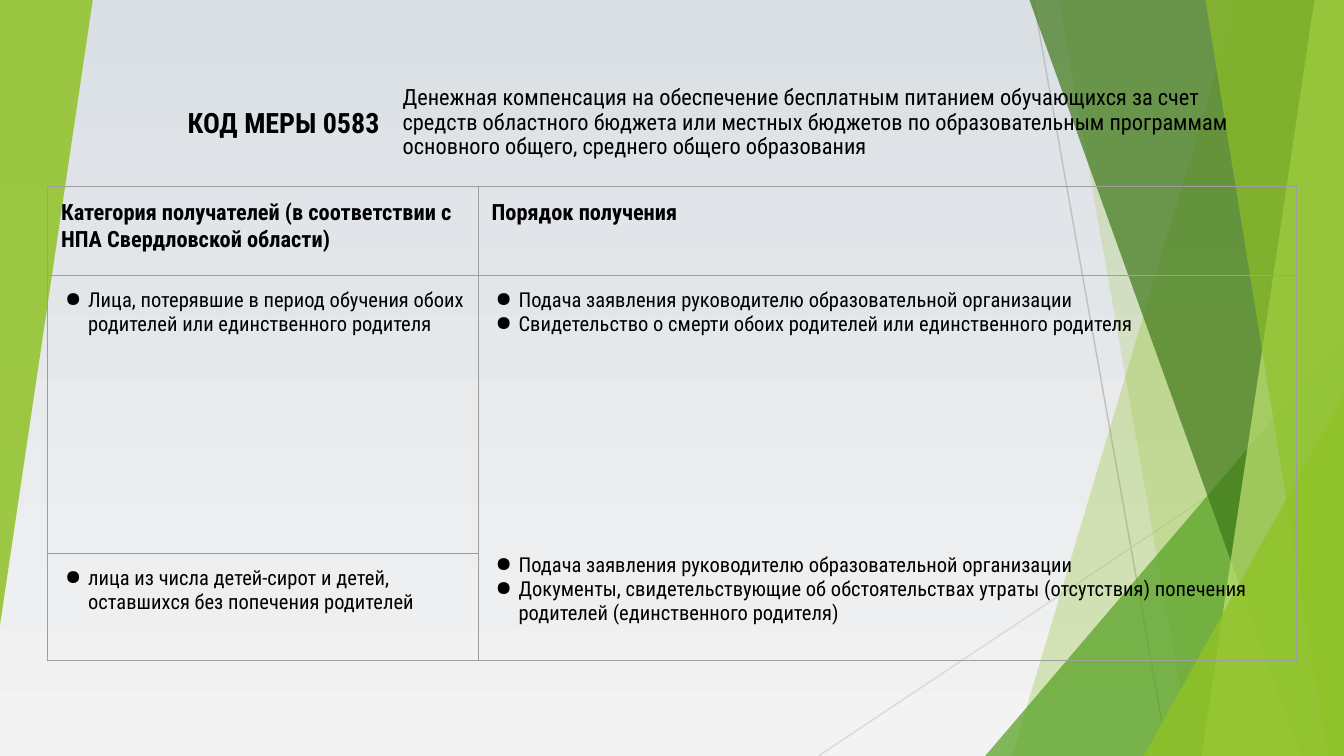
from lxml.etree import SubElement
from pptx import Presentation
from pptx.dml.color import RGBColor
from pptx.enum.shapes import MSO_CONNECTOR, MSO_SHAPE
from pptx.enum.text import MSO_ANCHOR, MSO_AUTO_SIZE, PP_ALIGN
from pptx.oxml.ns import qn
from pptx.util import Pt

WIDTH, HEIGHT = 720, 405
FONT = "Roboto Condensed"
COLORS = {
    "text": "000000", "border": "9E9E9E", "sky": "DADFE4", "ground": "F3F3F3",
    "line": "BFBFBF", "pale_line": "D9D9D9", "lime": "90C226",
    "green": "54A021", "dark": "3F7819", "light": "C0E474",
}
TITLE = (
    "Денежная компенсация на обеспечение бесплатным питанием обучающихся за счет "
    "средств областного бюджета или местных бюджетов по образовательным программам "
    "основного общего, среднего общего образования"
)
HEADERS = ["Категория получателей (в соответствии с НПА Свердловской области)", "Порядок получения"]
CATEGORIES = [
    "Лица, потерявшие в период обучения обоих родителей или единственного родителя",
    "лица из числа детей-сирот и детей, оставшихся без попечения родителей",
]
APPLICATION = "Подача заявления руководителю образовательной организации"
PROCEDURES = [
    [APPLICATION, "Свидетельство о смерти обоих родителей или единственного родителя"],
    [APPLICATION, "Документы, свидетельствующие об обстоятельствах утраты (отсутствия) "
                  "попечения родителей (единственного родителя)"],
]
GROUP_GAP = 116


def rgb(name):
    """Return the named palette colour."""
    return RGBColor.from_string(COLORS[name])


class SlideBuilder:
    """Hold the style and the current slide, and draw each kind of element."""

    def __init__(self, presentation):
        """Add a title-only slide with a vertical gradient behind it."""
        self.slide = presentation.slides.add_slide(presentation.slide_layouts[5])
        self.shapes = self.slide.shapes
        fill = self.slide.background.fill
        fill.gradient()
        fill.gradient_angle = 270
        for stop, name in zip(fill.gradient_stops, ("sky", "ground")):
            stop.color.rgb = rgb(name)

    def line(self, start, end, color):
        """Draw a thin straight line."""
        connector = self.shapes.add_connector(MSO_CONNECTOR.STRAIGHT, *map(Pt, start + end))
        connector.line.color.rgb = rgb(color)
        connector.line.width = Pt(0.75)
        SubElement(connector.element.spPr, qn("a:effectLst"))

    def paint(self, shape, color, opacity):
        """Give a shape a translucent fill with no outline or shadow."""
        shape.fill.solid()
        shape.fill.fore_color.rgb = rgb(color)
        alpha = SubElement(shape.element.spPr.find(".//" + qn("a:srgbClr")), qn("a:alpha"))
        alpha.set("val", str(opacity * 1000))
        shape.line.fill.background()
        shape.shadow.inherit = False

    def band(self, top_left, bottom_left, color, opacity):
        """Draw a full-height band with a slanted left side."""
        builder = self.shapes.build_freeform(Pt(top_left), 0)
        corners = [(WIDTH, 0), (WIDTH, HEIGHT), (bottom_left, HEIGHT)]
        builder.add_line_segments([(Pt(x), Pt(y)) for x, y in corners])
        self.paint(builder.convert_to_shape(), color, opacity)

    def triangle(self, box, color, opacity, rotation=0):
        """Draw a right triangle."""
        shape = self.shapes.add_shape(MSO_SHAPE.ISOSCELES_TRIANGLE, *map(Pt, box))
        shape.adjustments[0] = 1
        shape.rotation = rotation
        self.paint(shape, color, opacity)

    def add_text(self, paragraph, text, size, bold=False):
        """Put formatted text in a paragraph."""
        run = paragraph.add_run()
        run.text = text
        run.font.color.rgb = rgb("text")
        for name, value in {"name": FONT, "size": Pt(size), "bold": bold}.items():
            setattr(run.font, name, value)

    def frame(self, shape, horizontal, vertical):
        """Set up a middle-anchored text frame and return its first paragraph."""
        values = {
            "word_wrap": True, "auto_size": MSO_AUTO_SIZE.NONE, "vertical_anchor": MSO_ANCHOR.MIDDLE,
            "margin_left": Pt(horizontal), "margin_right": Pt(horizontal),
            "margin_top": Pt(vertical), "margin_bottom": Pt(vertical),
        }
        for name, value in values.items():
            setattr(shape.text_frame, name, value)
        return shape.text_frame.paragraphs[0]

    def title(self, text, box):
        """Fill the title placeholder and bring it to the front."""
        title = self.shapes.title
        for name, value in zip(("left", "top", "width", "height"), box):
            setattr(title, name, Pt(value))
        paragraph = self.frame(title, 5.2, 2.6)
        paragraph.alignment = PP_ALIGN.LEFT
        paragraph.line_spacing = 0.9
        self.add_text(paragraph, text, 12)
        title.element.getparent().append(title.element)

    def label(self, text, box):
        """Add a bold right-aligned text box."""
        paragraph = self.frame(self.shapes.add_textbox(*map(Pt, box)), 7.2, 7.2)
        paragraph.alignment = PP_ALIGN.RIGHT
        self.add_text(paragraph, text, 15, True)

    def table(self, left, top, columns, rows):
        """Add an unfilled table with thin borders."""
        box = (left, top, sum(columns), sum(rows))
        table = self.shapes.add_table(len(rows), len(columns), *map(Pt, box)).table
        table.first_row = table.horz_banding = False
        for column, width in zip(table.columns, columns):
            column.width = Pt(width)
        for row, height in zip(table.rows, rows):
            row.height = Pt(height)
        for cell in table.iter_cells():
            for side in ("left", "right", "top", "bottom"):
                setattr(cell, f"margin_{side}", Pt(7.2))
            self.borders(cell)
        return table

    def borders(self, cell):
        """Outline one table cell."""
        properties = cell._tc.get_or_add_tcPr()
        for tag in ("a:lnL", "a:lnR", "a:lnT", "a:lnB"):
            border = SubElement(properties, qn(tag), w=str(Pt(0.75)))
            SubElement(SubElement(border, qn("a:solidFill")), qn("a:srgbClr"), val=COLORS["border"])
        cell.fill.background()

    def bullets(self, cell, groups):
        """Fill a cell with groups of bulleted lines, set apart by a wide gap."""
        frame = cell.text_frame
        for group_number, group in enumerate(groups):
            for number, text in enumerate(group):
                first = group_number == number == 0
                paragraph = frame.paragraphs[0] if first else frame.add_paragraph()
                if group_number and number == 0:
                    paragraph.space_before = Pt(GROUP_GAP)
                properties = paragraph._p.get_or_add_pPr()
                properties.set("marL", str(Pt(14.4)))
                properties.set("indent", str(Pt(-12.24)))
                SubElement(properties, qn("a:buChar"), char="●")
                self.add_text(paragraph, text, 11)


def main():
    """Build and save the slide."""
    presentation = Presentation()
    presentation.slide_width, presentation.slide_height = Pt(WIDTH), Pt(HEIGHT)
    builder = SlideBuilder(presentation)

    builder.line((553.7, 0), (625.7, HEIGHT), "line")
    builder.line((WIDTH, 217.4), (438.5, HEIGHT), "pale_line")
    builder.band(663.1, 542.2, "lime", 30)
    builder.band(567.4, 638.6, "lime", 20)
    builder.triangle((527.8, 180, 192.2, 225), "green", 72)
    builder.band(551.5, 697, "dark", 70)
    builder.band(704.2, 643.7, "light", 70)
    builder.band(645.8, 711.4, "lime", 65)
    builder.triangle((612.7, 211.7, 107.3, 193.3), "lime", 80)
    builder.triangle((0, 0, 49.7, 334.8), "lime", 85, 180)

    table = builder.table(25.6, 100, [230.6, 438.5], [47.5, 149, 57.5])
    for column, text in enumerate(HEADERS):
        builder.add_text(table.cell(0, column).text_frame.paragraphs[0], text, 12, True)
    for row, text in enumerate(CATEGORIES, 1):
        builder.bullets(table.cell(row, 0), [[text]])
    table.cell(1, 1).merge(table.cell(2, 1))
    builder.bullets(table.cell(1, 1), PROCEDURES)

    builder.title(TITLE, (210.5, 38, 453.6, 55.5))
    builder.label("КОД МЕРЫ 0583", (58.8, 38, 151.7, 55.5))
    presentation.save("out.pptx")


if __name__ == "__main__":
    main()
